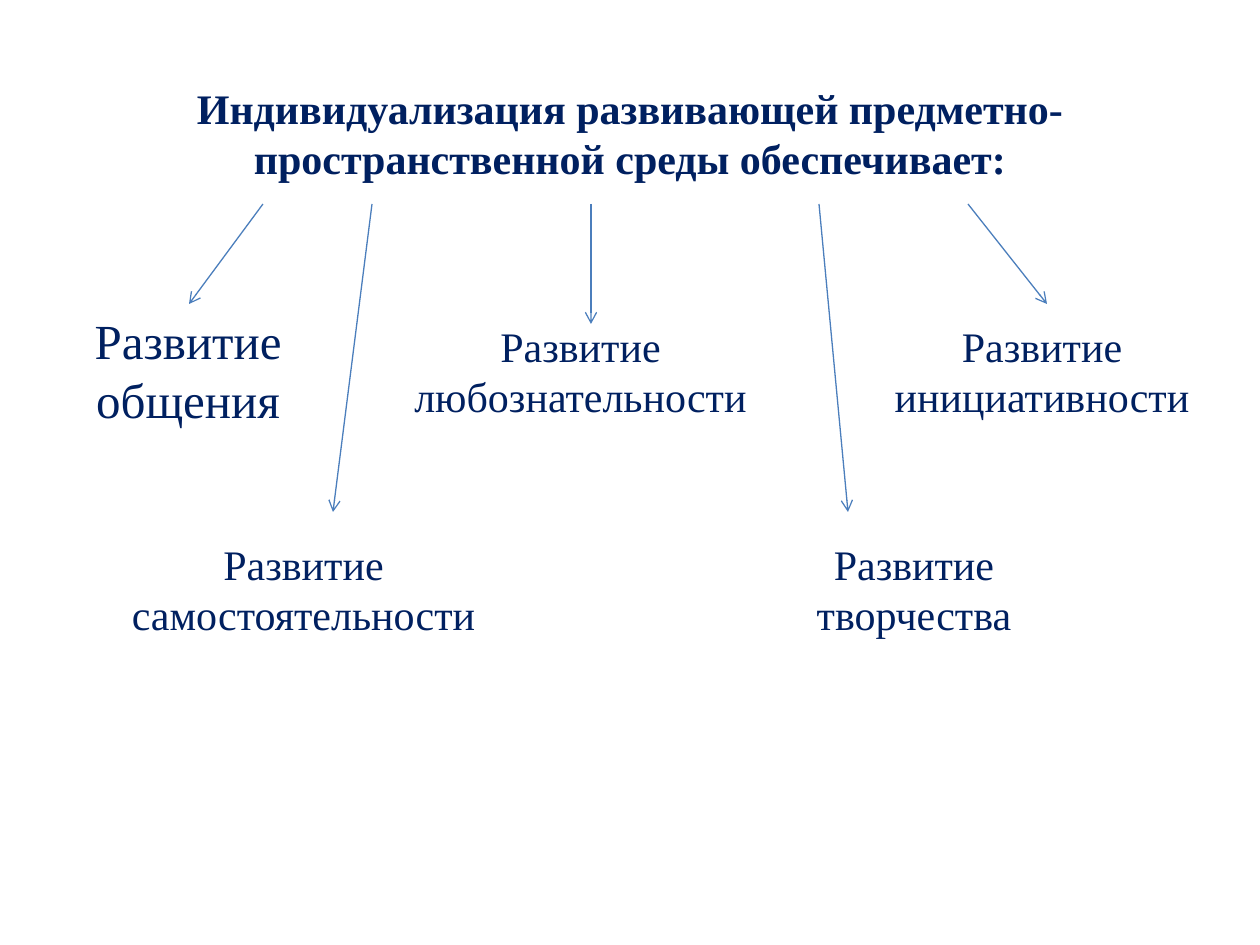
"""Build a slide on what an individualised learning environment provides."""
import pptx
import pptx.dml.color
import pptx.enum.shapes
import pptx.enum.text
import pptx.oxml
import pptx.oxml.ns
import pptx.util

NAVY = "002060"
BLUE = "4B7EBC"
ARROW_TOP = 204


def px(length):
    return pptx.util.Emu(round(length * 914400 / 126))


def write_text(shape, text, size, bold=False):
    frame = shape.text_frame
    frame.text = text
    frame.word_wrap = True
    frame.auto_size = pptx.enum.text.MSO_AUTO_SIZE.SHAPE_TO_FIT_TEXT
    frame.vertical_anchor = pptx.enum.text.MSO_ANCHOR.TOP
    paragraph = frame.paragraphs[0]
    paragraph.alignment = pptx.enum.text.PP_ALIGN.CENTER
    font = paragraph.runs[0].font
    font.name = "Times New Roman"
    font.size = pptx.util.Pt(size)
    font.bold = bold
    font.color.rgb = pptx.dml.color.RGBColor.from_string(NAVY)


presentation = pptx.Presentation()
presentation.slide_width = px(1260)
presentation.slide_height = px(945)
slide = presentation.slides.add_slide(presentation.slide_layouts[5])

title = slide.shapes.title
title.left, title.top, title.width, title.height = px(134), px(76), px(992), px(115)
write_text(
    title,
    "Индивидуализация развивающей предметно-пространственной среды обеспечивает:",
    24,
    bold=True,
)

outcomes = [
    ("Развитие общения", 28, 54, 304, 268, 131),
    ("Развитие любознательности", 24, 382, 314, 397, 115),
    ("Развитие инициативности", 24, 868, 314, 348, 115),
    ("Развитие самостоятельности", 24, 105, 532, 397, 115),
    ("Развитие творчества", 24, 740, 532, 348, 115),
]
for text, size, left, top, width, height in outcomes:
    box = slide.shapes.add_textbox(px(left), px(top), px(width), px(height))
    write_text(box, text, size)

arrows = [
    (263, 189, 304),
    (372, 333, 512),
    (591, 591, 324),
    (819, 848, 512),
    (968, 1047, 304),
]
for start_x, end_x, end_y in arrows:
    arrow = slide.shapes.add_connector(
        pptx.enum.shapes.MSO_CONNECTOR.STRAIGHT,
        px(start_x), px(ARROW_TOP), px(end_x), px(end_y),
    )
    arrow.line.color.rgb = pptx.dml.color.RGBColor.from_string(BLUE)
    arrow.line.width = pptx.util.Pt(0.75)
    tail = pptx.oxml.parse_xml(
        f'<a:tailEnd {pptx.oxml.ns.nsdecls("a")} type="arrow"/>'
    )
    arrow.line._get_or_add_ln().append(tail)
    effects = pptx.oxml.parse_xml(f'<a:effectLst {pptx.oxml.ns.nsdecls("a")}/>')
    arrow._element.spPr.append(effects)

presentation.save("out.pptx")
